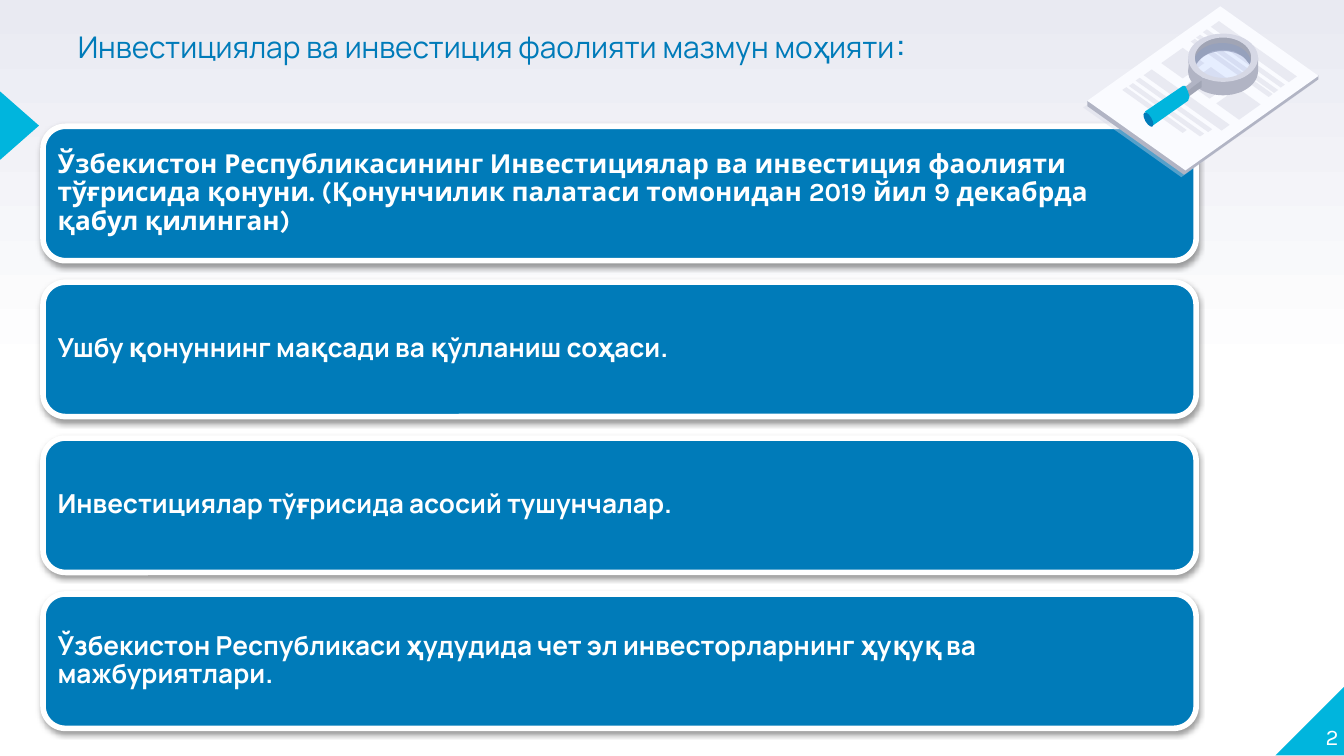
from math import cos, sin, pi
from lxml.etree import SubElement as Sub
from pptx import Presentation
from pptx.dml.color import RGBColor
from pptx.enum.shapes import MSO_SHAPE as Kind
from pptx.enum.text import MSO_ANCHOR as Anchor, PP_ALIGN as Align
from pptx.oxml.ns import qn
from pptx.util import Inches, Pt

# Content
TITLE = ("Инвестициялар ва инвестиция фаолияти мазмун моҳияти", ":")
CARDS = [
    ("Ўзбекистон Республикасининг Инвестициялар ва инвестиция фаолияти "
     "тўғрисида қонуни. (Қонунчилик палатаси томонидан 2019 йил 9 декабрда "
     "қабул қилинган)", "Karla"),
    ("Ушбу қонуннинг мақсади ва қўлланиш соҳаси.", "Manrope"),
    ("Инвестициялар тўғрисида асосий тушунчалар.", "Manrope"),
    ("Ўзбекистон Республикаси ҳудудида чет эл инвесторларнинг ҳуқуқ ва "
     "мажбуриятлари.", "Manrope"),
]
PAGE = "2"

THEME = dict(
    blue="007BB9", cyan="00B5DD", white="FFFFFF", mist="E9EAF2",
    paper="FAFBFF", edge="B1B4C4", dark="A1A5B5", rim="D6D8E5",
    lens="3E7EFF", black="000000",
    title=16, colon=20, card=14, page=12,
)

# Sheet marks: left corner x, y, size up-right, size down-right
MARKS = [
    (9.01, 0.20, 0.06, 0.58), (8.95, 0.24, 0.03, 0.58),
    (8.90, 0.28, 0.03, 0.58), (8.86, 0.31, 0.03, 0.58),
    (8.51, 0.56, 0.06, 0.58), (8.45, 0.60, 0.03, 0.54),
    (8.40, 0.64, 0.03, 0.53), (8.35, 0.67, 0.03, 0.45),
    (8.64, 0.47, 0.16, 0.16), (8.84, 0.62, 0.17, 0.16),
    (9.05, 0.77, 0.16, 0.17),
]
SLOPE = 0.71
UNIT = 1000  # outline steps per inch
SIDE = [(9.78, 0.58), (9.08, 0.08), (8.12, 0.77), (8.09, 0.75), (8.09, 0.79),
        (8.81, 1.3), (9.81, 0.59), (9.81, 0.56)]
WALL = [(8.89, 0.48), (8.87, 0.43), (8.9, 0.34), (9, 0.27), (9.19, 0.28),
        (9.32, 0.37), (9.32, 0.43), (9.3, 0.48), (9.25, 0.42), (9.18, 0.38),
        (9.1, 0.37), (9.02, 0.38), (8.95, 0.42)]
FRONT = [(8.84, 0.43), (8.86, 0.49), (8.95, 0.58), (9.07, 0.6), (9.18, 0.59),
         (9.27, 0.56), (9.33, 0.49), (9.36, 0.43), (9.36, 0.53), (9.32, 0.62),
         (9.24, 0.68), (9.14, 0.7), (9.02, 0.69), (8.92, 0.65), (8.85, 0.57)]
NECK = [(8.94, 0.61), (8.83, 0.68), (8.8, 0.66), (8.91, 0.58)]
UNDER = [(8.94, 0.65), (8.83, 0.73), (8.83, 0.68), (8.94, 0.6)]
GRIP = [(8.85, 0.72), (8.84, 0.68), (8.82, 0.64), (8.8, 0.64), (8.52, 0.83),
        (8.57, 0.94), (8.84, 0.75)]

prs = Presentation()
prs.slide_width = Inches(10)
prs.slide_height = prs.slide_width * 9 // 16
slide = prs.slides.add_slide(prs.slide_layouts[6])
shapes = slide.shapes


def hue(name):
    return RGBColor.from_string(THEME[name])


def paint(shape, name, alpha=None):
    shape.shadow.inherit = False
    shape.fill.solid()
    shape.fill.fore_color.rgb = hue(name)
    shape.line.fill.background()
    if alpha:
        clr = shape.fill._xPr.find(".//" + qn("a:srgbClr"))
        Sub(clr, qn("a:alpha"), val=str(alpha * 1000))
    return shape


def add(kind, x, y, w, h, name, turn=0, alpha=None):
    shape = shapes.add_shape(kind, *map(Inches, (x, y, w, h)))
    shape.rotation = turn
    return paint(shape, name, alpha)


def trace(name, *loops, alpha=None):
    pen = None
    for loop in loops:
        first, *rest = [(round(x * UNIT), round(y * UNIT)) for x, y in loop]
        if pen:
            pen.move_to(*first)
        else:
            pen = shapes.build_freeform(*first, scale=Inches(1) / UNIT)
        pen.add_line_segments(rest, close=True)
    return paint(pen.convert_to_shape(), name, alpha)


def tile(x, y, up, down):
    """Isometric patch from its left corner."""
    return [(x, y), (x + up, y - SLOPE * up),
            (x + up + down, y + SLOPE * (down - up)),
            (x + down, y + SLOPE * down)]


def ring(x, y, rx, ry, way=1, n=48):
    steps = [way * 2 * pi * i / n for i in range(n)]
    return [(x + rx * cos(a), y + ry * sin(a)) for a in steps]


def write(shape, parts, font, size, name, pad=0, right=0, bold=False):
    frame = shape.text_frame
    frame.word_wrap = True
    frame.margin_left = frame.margin_top = frame.margin_bottom = Inches(pad)
    frame.margin_right = Inches(right)
    para = frame.paragraphs[0]
    para.alignment = Align.LEFT
    para.font.name, para.font.size, para.font.bold = font, Pt(size), bold
    para.font.color.rgb = hue(name)
    for part in parts:
        para.add_run().text = part
    return frame, para


def shade(shape):
    box = shape._element.spPr.find(qn("a:effectLst"))
    cast = Sub(box, qn("a:outerShdw"), blurRad=str(Pt(3.1)), dist=str(Pt(1.6)),
               dir="5400000", rotWithShape="0")
    clr = Sub(cast, qn("a:srgbClr"), val=THEME["black"])
    Sub(clr, qn("a:alpha"), val="38000")


# Background and accents
back = slide.background.fill
back.gradient()
back.gradient_angle = 90
for stop, place, name in zip(back.gradient_stops, (0.5, 1), ("white", "mist")):
    stop.position = place
    stop.color.rgb = hue(name)
add(Kind.RIGHT_TRIANGLE, 9.49, 5.11, 0.51, 0.51, "cyan", 270)
add(Kind.ISOSCELES_TRIANGLE, -0.11, 0.79, 0.51, 0.29, "cyan", 90)

# Title
box = shapes.add_textbox(*map(Inches, (0.58, 0.22, 7.14, 0.6)))
_, para = write(box, TITLE, "Manrope", THEME["title"], "blue")
para.line_spacing = 0.8
para.runs[1].font.size = Pt(THEME["colon"])

# Cards
for i, (text, font) in enumerate(CARDS):
    card = add(Kind.ROUNDED_RECTANGLE, 0.32, 0.94 + 1.16 * i, 8.58, 1, "blue")
    card.line.color.rgb = hue("white")
    card.line.width = Pt(3)
    shade(card)
    frame, para = write(card, [text], font, THEME["card"], "white",
                        pad=0.06, right=0.2, bold=True)
    frame.vertical_anchor = Anchor.MIDDLE
    para.line_spacing = 0.9

# Page number
box = shapes.add_textbox(*map(Inches, (9.46, 5.07, 0.5, 0.51)))
frame, para = write(box, [PAGE], "Karla", THEME["page"], "white")
frame.vertical_anchor = Anchor.BOTTOM
para.alignment = Align.RIGHT

# Sheet of paper
trace("rim", tile(8.06, 0.8, 1, 0.73), alpha=40)
trace("edge", SIDE)
trace("paper", tile(8.09, 0.75, 0.99, 0.73))
for mark in MARKS:
    trace("mist", tile(*mark))

# Magnifier
trace("edge", ring(9.1, 0.53, 0.26, 0.18), ring(9.1, 0.53, 0.21, 0.15, -1))
trace("dark", WALL)
add(Kind.OVAL, 8.88, 0.32, 0.43, 0.31, "lens", alpha=10)
trace("edge", FRONT)
trace("rim", ring(9.1, 0.43, 0.26, 0.18), ring(9.1, 0.43, 0.21, 0.15, -1))
trace("edge", NECK)
trace("dark", UNDER)
trace("cyan", GRIP)
add(Kind.OVAL, 8.52, 0.83, 0.05, 0.12, "blue", 330)

prs.save("out.pptx")
